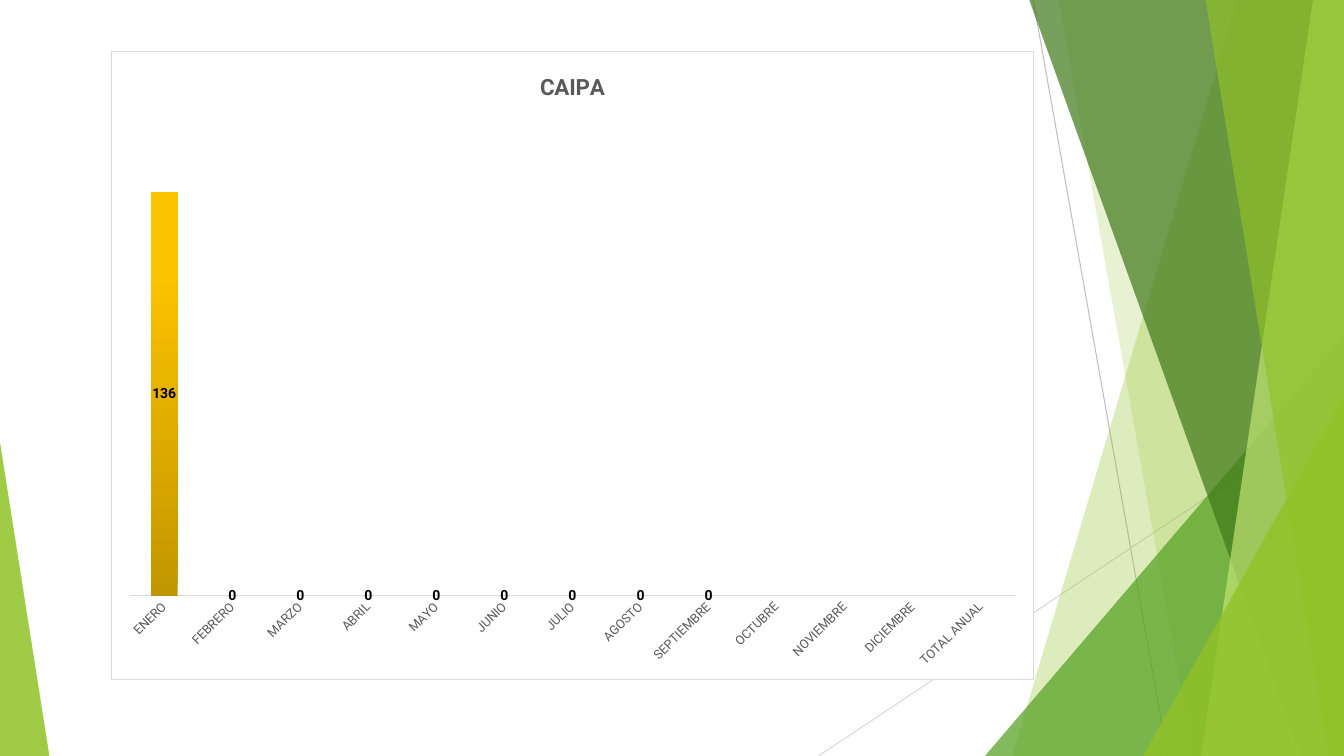
import pptx
import pptx.chart.data
import pptx.dml.color
import pptx.enum.chart
import pptx.enum.shapes
import pptx.oxml
import pptx.oxml.ns
import pptx.util

Pt = pptx.util.Pt
RGBColor = pptx.dml.color.RGBColor
qn = pptx.oxml.ns.qn

W, H, TOP = 960, 540, -0.72
FONT = "Roboto"
WHITE = RGBColor(0xFF, 0xFF, 0xFF)
BLACK = RGBColor(0x00, 0x00, 0x00)
TEXT_GREY = RGBColor(0x59, 0x59, 0x59)
MID_GREY = RGBColor(0xBF, 0xBF, 0xBF)
LIGHT_GREY = RGBColor(0xD9, 0xD9, 0xD9)
LIME = RGBColor(0x90, 0xC2, 0x26)
GREEN = RGBColor(0x54, 0xA0, 0x21)
DARK_GREEN = RGBColor(0x3F, 0x78, 0x19)
PALE_LIME = RGBColor(0xC0, 0xE4, 0x74)
GOLD_DARK = RGBColor(0xC2, 0x96, 0x00)
GOLD = RGBColor(0xFC, 0xC3, 0x00)
GOLD_LIGHT = RGBColor(0xFD, 0xC4, 0x00)

MONTHS = ["ENERO", "FEBRERO", "MARZO", "ABRIL", "MAYO", "JUNIO", "JULIO",
          "AGOSTO", "SEPTIEMBRE", "OCTUBRE", "NOVIEMBRE", "DICIEMBRE",
          "TOTAL ANUAL"]
VALUES = [136] + [0] * 8 + [None] * 4


def xml(text):
    """Parse a fragment that uses the a: and c: prefixes."""
    head, tail = text.split(">", 1)
    slash = "/" if head.endswith("/") else ""
    return pptx.oxml.parse_xml(
        f"{head.rstrip('/')} {pptx.oxml.ns.nsdecls('a', 'c')}{slash}>{tail}")


class Deck:
    def __init__(self):
        self.prs = pptx.Presentation()
        self.prs.slide_width, self.prs.slide_height = Pt(W), Pt(H)
        self.s = self.prs.slides.add_slide(self.prs.slide_layouts[6])

    def line(self, x1, y1, x2, y2, color):
        c = self.s.shapes.add_connector(
            pptx.enum.shapes.MSO_CONNECTOR.STRAIGHT,
            Pt(x1), Pt(y1), Pt(x2), Pt(y2))
        c.line.color.rgb, c.line.width = color, Pt(0.75)
        c._element.spPr.append(xml("<a:effectLst/>"))

    def paint(self, sp, color, opacity):
        sp.shadow.inherit = False
        sp.line.fill.background()
        sp.fill.solid()
        sp.fill.fore_color.rgb = color
        clr = sp._element.spPr.find(qn("a:solidFill"))[0]
        clr.append(xml(f'<a:alpha val="{opacity * 1000}"/>'))

    def band(self, top_x, bottom_x, color, opacity):
        """Strip from a slanted left edge to the right slide edge."""
        fb = self.s.shapes.build_freeform(Pt(top_x), Pt(TOP))
        fb.add_line_segments([(Pt(W), Pt(TOP)), (Pt(W), Pt(H)),
                              (Pt(bottom_x), Pt(H))])
        self.paint(fb.convert_to_shape(), color, opacity)

    def triangle(self, x, y, w, apex, color, opacity):
        """Triangle that stands on the bottom slide edge."""
        sp = self.s.shapes.add_shape(
            pptx.enum.shapes.MSO_SHAPE.ISOSCELES_TRIANGLE,
            Pt(x), Pt(y), Pt(w), Pt(H - y))
        sp.adjustments[0] = apex
        self.paint(sp, color, opacity)

    def font(self, font, size, color, bold=False):
        font.name, font.size, font.bold = FONT, Pt(size), bold
        font.color.rgb = color

    def column_chart(self, title, cats, vals, x, y, w, h):
        data = pptx.chart.data.CategoryChartData()
        data.categories = cats
        data.add_series("Series 1", vals)
        chart = self.s.shapes.add_chart(
            pptx.enum.chart.XL_CHART_TYPE.COLUMN_STACKED,
            Pt(x), Pt(y), Pt(w), Pt(h), data).chart
        self.font(chart.font, 10, BLACK)
        chart.has_legend = False

        # Title
        chart.has_title = True
        tf = chart.chart_title.text_frame
        tf.text = title
        self.font(tf.paragraphs[0].font, 16, TEXT_GREY, True)
        chart.chart_title.include_in_layout = False

        # Axes
        none = pptx.enum.chart.XL_TICK_MARK.NONE
        cat, val = chart.category_axis, chart.value_axis
        cat.major_tick_mark = cat.minor_tick_mark = none
        cat.format.line.color.rgb = LIGHT_GREY
        cat.format.line.width = Pt(1)
        self.font(cat.tick_labels.font, 9, TEXT_GREY)
        cat._element.find(qn("c:txPr")).find(qn("a:bodyPr")).set(
            "rot", "-2700000")
        val.minimum_scale, val.maximum_scale = 0, 160
        val.has_major_gridlines = False
        val.visible = False

        # Columns and their values
        plot = chart.plots[0]
        plot.vary_by_categories = False
        plot.gap_width, plot.overlap = 150, 100
        ser = plot.series[0]
        stops = "".join(
            f'<a:gs pos="{pos * 1000}"><a:srgbClr val="{color}"/></a:gs>'
            for pos, color in [(0, GOLD_DARK), (80, GOLD), (100, GOLD_LIGHT)])
        ser.format.line.fill.background()
        ser._element.find(qn("c:spPr")).insert(0, xml(
            f'<a:gradFill rotWithShape="1"><a:gsLst>{stops}</a:gsLst>'
            '<a:lin ang="16200000" scaled="0"/></a:gradFill>'))
        labels = ser.data_labels
        labels.show_value = True
        labels.position = pptx.enum.chart.XL_LABEL_POSITION.CENTER
        self.font(labels.font, 10, BLACK, True)

        # Plot position and chart frame
        area = chart._chartSpace.chart.plotArea
        for old in area.findall(qn("c:layout")):
            area.remove(old)
        sizes = "".join(f'<c:{k} val="{v}"/>' for k, v in
                        [("x", 0.02), ("y", 0.11), ("w", 0.96), ("h", 0.757)])
        area.insert(0, xml(
            '<c:layout><c:manualLayout><c:layoutTarget val="inner"/>'
            '<c:xMode val="edge"/><c:yMode val="edge"/>'
            f'{sizes}</c:manualLayout></c:layout>'))
        chart._chartSpace.chart.addnext(xml(
            f'<c:spPr><a:solidFill><a:srgbClr val="{WHITE}"/></a:solidFill>'
            f'<a:ln w="{Pt(0.75)}"><a:solidFill><a:srgbClr val="{LIGHT_GREY}"/>'
            '</a:solidFill></a:ln></c:spPr>'))


def main():
    d = Deck()
    # Background facets
    d.line(738, 0, 834, H, MID_GREY)
    d.line(W, 290, 584.6, H, LIGHT_GREY)
    d.band(884, 723, LIME, 30)
    d.band(756, 852, LIME, 20)
    d.triangle(703.5, 240, 256.5, 1, GREEN, 72)
    d.band(735, 929.5, DARK_GREEN, 70)
    d.band(938, 858, PALE_LIME, 70)
    d.band(861, 949, LIME, 65)
    d.triangle(816.5, 283, 143.5, 1, LIME, 80)
    d.triangle(0, 316, 35.3, 0, LIME, 85)
    # Monthly chart
    d.column_chart("CAIPA", MONTHS, VALUES, 79.4, 36.2, 659, 449.5)
    d.prs.save("out.pptx")


if __name__ == "__main__":
    main()
